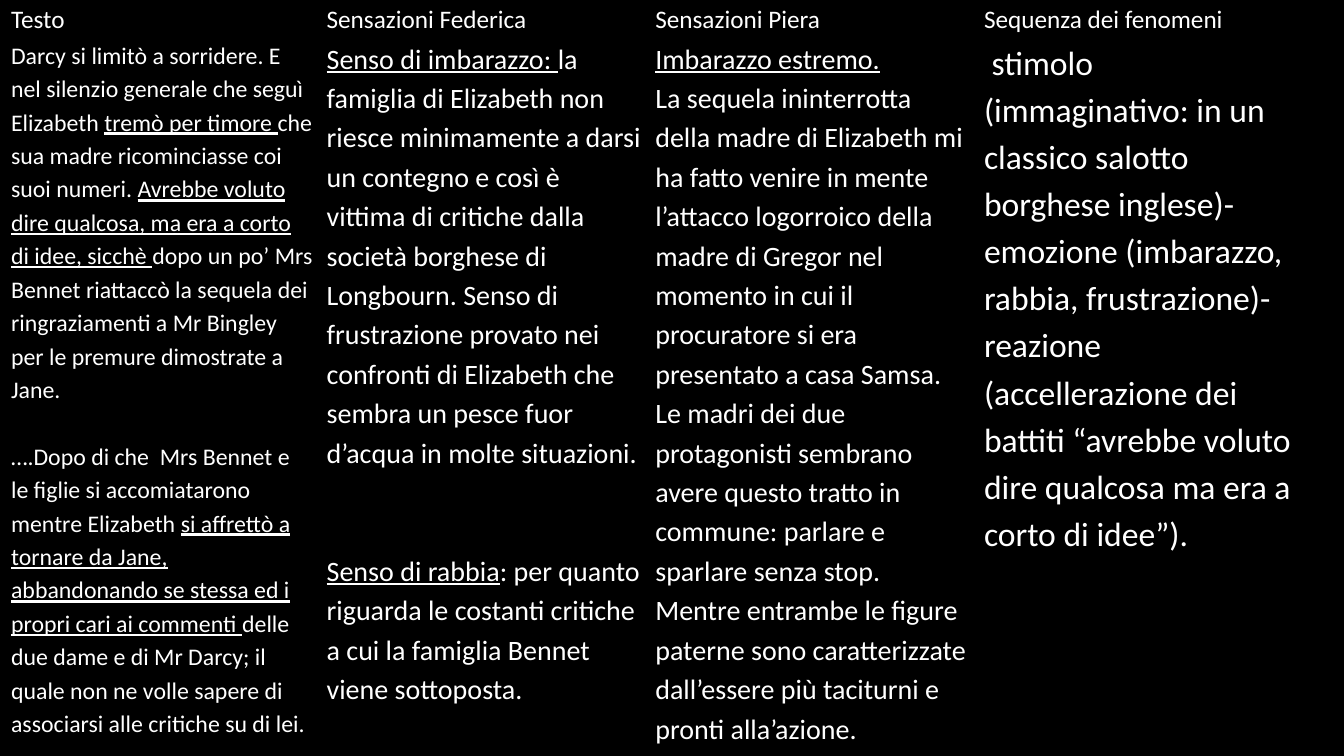
from lxml.etree import SubElement as Sub
from pptx import Presentation
from pptx.dml.color import RGBColor as Rgb
from pptx.oxml.ns import qn
from pptx.util import Inches, Pt

INK = {"back": "000000", "line": "000000", "text": "FFFFFF"}
HEADS = ["Testo", "Sensazioni Federica", "Sensazioni Piera", "Sequenza dei fenomeni"]
NOTES = [
    (17, 23.9, [
        "Darcy si limitò a sorridere. E nel silenzio generale che seguì Elizabeth "
        "_tremò per timore _che sua madre ricominciasse coi suoi numeri. "
        "_Avrebbe voluto dire qualcosa, ma era a corto di idee, sicchè _dopo un po’ "
        "Mrs Bennet riattaccò la sequela dei ringraziamenti a Mr Bingley per le "
        "premure dimostrate a Jane.",
        "….Dopo di che  Mrs Bennet e le figlie si accomiatarono mentre Elizabeth "
        "_si affrettò a tornare da Jane, abbandonando se stessa ed i propri cari ai "
        "commenti _delle due dame e di Mr Darcy; il quale non ne volle sapere di "
        "associarsi alle critiche su di lei.",
    ]),
    (20, 56.2, [
        "_Senso di imbarazzo: _la famiglia di Elizabeth non riesce minimamente a "
        "darsi un contegno e così è vittima di critiche dalla società borghese di "
        "Longbourn. Senso di frustrazione provato nei confronti di Elizabeth che "
        "sembra un pesce fuor d’acqua in molte situazioni.",
        "_Senso di rabbia_: per quanto riguarda le costanti critiche a cui la "
        "famiglia Bennet viene sottoposta.",
    ]),
    (20, 0, [
        "_Imbarazzo estremo.",
        "La sequela ininterrotta della madre di Elizabeth mi ha fatto venire in mente "
        "l’attacco logorroico della madre di Gregor nel momento in cui il procuratore "
        "si era presentato a casa Samsa.",
        "Le madri dei due protagonisti sembrano avere questo tratto in commune: "
        "parlare e sparlare senza stop.",
        "Mentre entrambe le figure paterne sono caratterizzate dall’essere più "
        "taciturni e pronti alla’azione.",
    ]),
    (24, 0, [
        " stimolo (immaginativo: in un classico salotto borghese inglese)- emozione "
        "(imbarazzo, rabbia, frustrazione)-reazione (accellerazione dei battiti "
        "“avrebbe voluto dire qualcosa ma era a corto di idee”).",
    ]),
]


class Deck:
    face = "Calibri"
    lead = 1.15

    def __init__(self):
        self.show = Presentation()
        self.show.slide_width, self.show.slide_height = Inches(13.33), Inches(7.5)
        self.slide = self.show.slides.add_slide(self.show.slide_layouts[6])
        fill = self.slide.background.fill
        fill.solid()
        fill.fore_color.rgb = Rgb.from_string(INK["back"])

    def table(self, left, top, wides, highs):
        frame = self.slide.shapes.add_table(
            len(highs), len(wides), Inches(left), Inches(top),
            Inches(sum(wides)), Inches(sum(highs)))
        grid = frame.table
        grid.first_row = grid.horz_banding = False
        for col, wide in zip(grid.columns, wides):
            col.width = Inches(wide)
        for row, high in zip(grid.rows, highs):
            row.height = Inches(high)
        return grid

    def cell(self, cell, size, gap, texts):
        cell.margin_left = cell.margin_right = Inches(0.07)
        cell.margin_top = cell.margin_bottom = 0
        self.edge(cell)
        cell.fill.background()
        for i, text in enumerate(texts):
            frame = cell.text_frame
            para = frame.add_paragraph() if i else frame.paragraphs[0]
            para.line_spacing = self.lead
            if i:
                para.space_before = Pt(gap)
            self.runs(para, text)
            font = para.font
            font.name, font.size = self.face, Pt(size)
            font.color.rgb = Rgb.from_string(INK["text"])

    def runs(self, para, text):
        for i, part in enumerate(text.split("_")):
            if part:
                run = para.add_run()
                run.text = part
                if i % 2:
                    run.font.underline = True

    def edge(self, cell):
        props = cell._tc.get_or_add_tcPr()
        for side in "LRTB":
            line = Sub(props, qn(f"a:ln{side}"), w=str(Pt(1)))
            Sub(Sub(line, qn("a:solidFill")), qn("a:srgbClr"), val=INK["line"])


def main():
    deck = Deck()
    grid = deck.table(0.04, 0, [3.13] + [3.26] * 3, [0.37, 6.86])
    for col, (head, note) in enumerate(zip(HEADS, NOTES)):
        deck.cell(grid.cell(0, col), 18, 0, [head])
        deck.cell(grid.cell(1, col), *note)
    deck.show.save("out.pptx")


if __name__ == "__main__":
    main()
